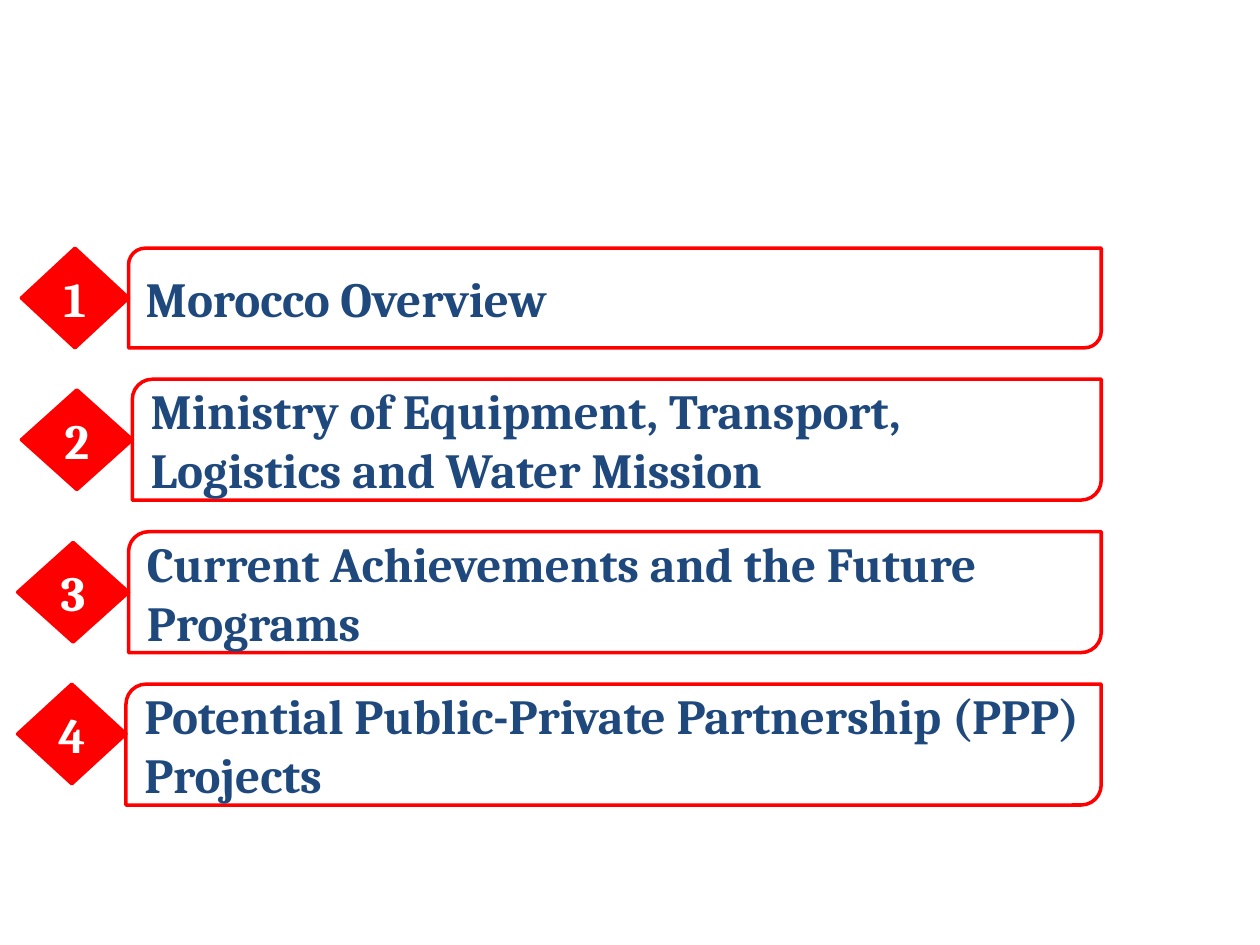
"""Builds an agenda slide with four numbered sections."""
from dataclasses import dataclass

from pptx import Presentation
from pptx.dml.color import RGBColor
from pptx.enum.shapes import MSO_SHAPE
from pptx.enum.text import MSO_ANCHOR, PP_ALIGN
from pptx.util import Inches, Pt

PANEL = MSO_SHAPE.ROUND_2_DIAG_RECTANGLE
DIAMOND = MSO_SHAPE.FLOWCHART_DECISION
MIDDLE = MSO_ANCHOR.MIDDLE
LEFT, CENTER = PP_ALIGN.LEFT, PP_ALIGN.CENTER


@dataclass(frozen=True)
class Theme:
    accent: RGBColor = RGBColor(0xFF, 0x00, 0x00)
    ink: RGBColor = RGBColor(0x1F, 0x49, 0x7D)
    light: RGBColor = RGBColor(0xFF, 0xFF, 0xFF)
    font: str = "Cambria"
    size: int = 28
    outline: int = 2


THEME = Theme()
SECTIONS = [
    {"title": "Morocco Overview", "height": 0.79, "diamond": 0.17, "panel": 1.02},
    {"title": "Ministry of Equipment, Transport, Logistics and Water Mission",
     "height": 0.96, "diamond": 0.17, "panel": 1.05},
    {"title": "Current Achievements and the Future Programs",
     "height": 0.96, "diamond": 0.14, "panel": 1.02},
    {"title": "Potential Public-Private Partnership (PPP) Projects",
     "height": 0.96, "diamond": 0.14, "panel": 1.0, "top_aligned": True},
]
FIRST_TOP, ROW_GAP = 1.97, 0.25
PANEL_RIGHT, DIAMOND_HEIGHT = 8.74, 0.79


def write(shape, text, *, color, align):
    frame = shape.text_frame
    frame.word_wrap = True
    frame.vertical_anchor = MIDDLE
    para = frame.paragraphs[0]
    para.alignment = align
    span = para.add_run()
    span.text = text
    span.font.name = THEME.font
    span.font.size = Pt(THEME.size)
    span.font.bold = True
    span.font.color.rgb = color


def add_outlined(group, kind, left, top, width, height, fill=None):
    shape = group.shapes.add_shape(kind, *map(Inches, (left, top, width, height)))
    shape.shadow.inherit = False
    shape.line.color.rgb = THEME.accent
    shape.line.width = Pt(THEME.outline)
    if fill is None:
        shape.fill.background()
    else:
        shape.fill.solid()
        shape.fill.fore_color.rgb = fill
    return shape


def add_section(page, number, section, top):
    group = page.shapes.add_group_shape()
    left, height = section["panel"], section["height"]
    panel = add_outlined(group, PANEL, left, top, PANEL_RIGHT - left, height)
    write(panel, section["title"], color=THEME.ink, align=LEFT)
    offset = 0 if section.get("top_aligned") else (height - DIAMOND_HEIGHT) / 2
    diamond = add_outlined(group, DIAMOND, section["diamond"], top + offset,
                           left - section["diamond"], DIAMOND_HEIGHT, THEME.accent)
    write(diamond, str(number), color=THEME.light, align=CENTER)


def main():
    deck = Presentation()
    deck.slide_width, deck.slide_height = Inches(10), Inches(7.5)
    page = deck.slides.add_slide(deck.slide_layouts[6])
    top = FIRST_TOP
    for number, section in enumerate(SECTIONS, 1):
        add_section(page, number, section, top)
        top += section["height"] + ROW_GAP
    deck.save("out.pptx")


if __name__ == "__main__":
    main()
